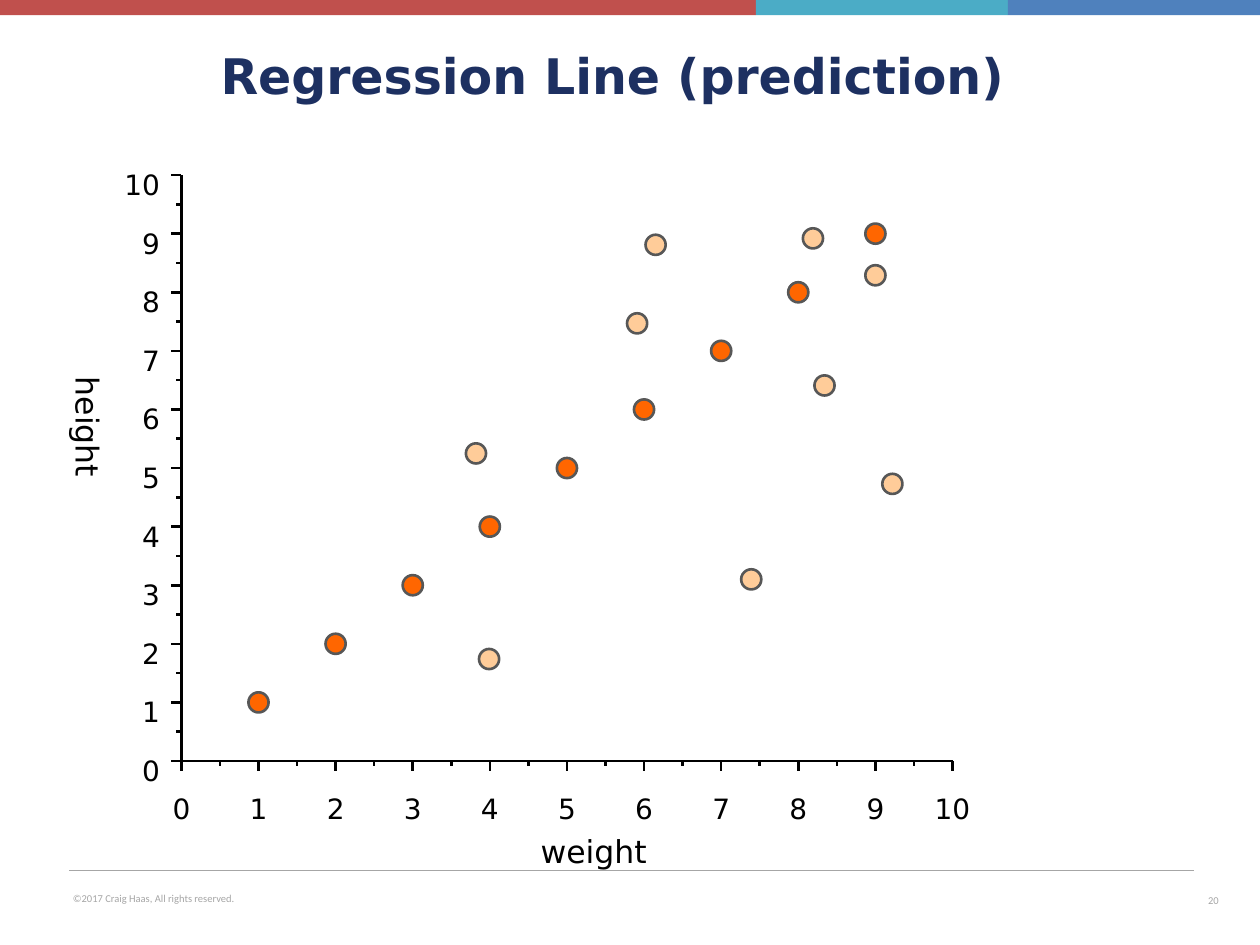
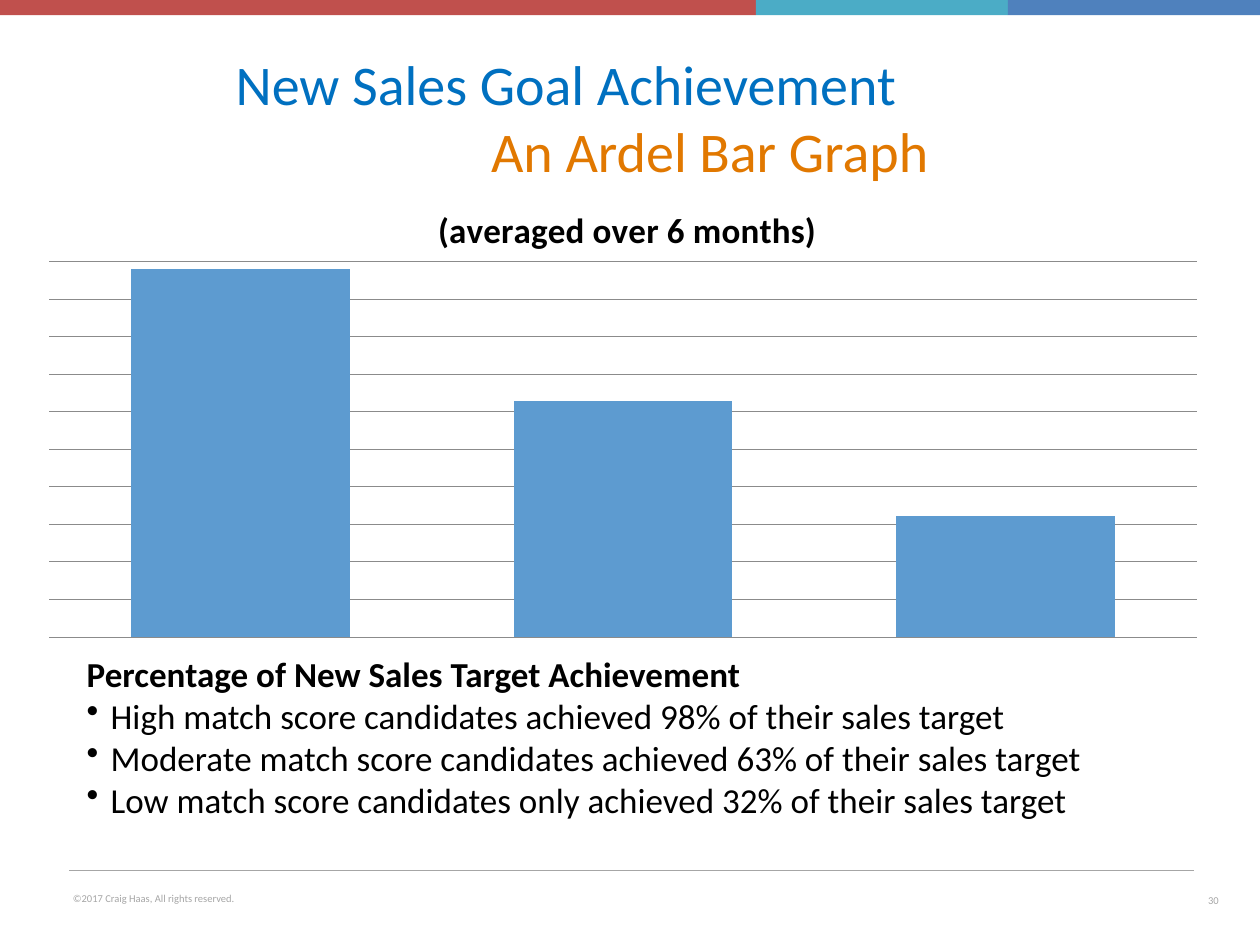
from dataclasses import dataclass

from pptx import Presentation
from pptx import util as u
from pptx.chart.data import CategoryChartData
from pptx.dml.color import RGBColor
from pptx.enum import chart as charts, shapes, text
from pptx.oxml.ns import qn
from pptx.oxml.xmlchemy import OxmlElement

Inches = u.Inches
LEFT, CENTER, RIGHT = text.PP_ALIGN.LEFT, text.PP_ALIGN.CENTER, text.PP_ALIGN.RIGHT
TOP, MIDDLE = text.MSO_ANCHOR.TOP, text.MSO_ANCHOR.MIDDLE


@dataclass(frozen=True)
class Theme:
    # Colours
    red: str = "C0504D"
    teal: str = "4BACC6"
    blue: str = "4F81BD"
    navy: str = "1D3061"
    title_blue: str = "0070C0"
    title_orange: str = "E17800"
    ink: str = "000000"
    footer: str = "A6A6A6"
    point_line: str = "575757"
    on_line: str = "FF6600"
    observed: str = "FFCC99"
    bar: str = "5D9BD0"
    grid: str = "8B8B8B"
    paper: str = "FFFFFF"
    # Fonts
    body_font: str = "Calibri"
    plot_font: str = "DejaVu Sans"
    chart_font: str = "Arial"
    # Type sizes
    footer_size: float = 6
    chart_size: float = 10
    tick_size: float = 16
    axis_size: float = 18
    body_size: float = 20
    plot_title_size: float = 28
    title_size: float = 32


THEME = Theme()


def rgb(value):
    return RGBColor.from_string(value)


def style_font(font, name, size, color, bold=False):
    font.name, font.size, font.bold = name, u.Pt(size), bold
    font.color.rgb = rgb(color)


def add_run(paragraph, words, name, size, color, bold=False):
    run = paragraph.add_run()
    run.text = words
    style_font(run.font, name, size, color, bold)


def set_frame(frame, insets=(0.1, 0.05), anchor=TOP):
    frame.word_wrap = True
    frame.auto_size = text.MSO_AUTO_SIZE.NONE
    frame.vertical_anchor = anchor
    frame.margin_left = frame.margin_right = Inches(insets[0])
    frame.margin_top = frame.margin_bottom = Inches(insets[1])


def add_text_frame(slide, box, insets=(0.1, 0.05), anchor=TOP):
    frame = slide.shapes.add_textbox(*map(Inches, box)).text_frame
    set_frame(frame, insets, anchor)
    return frame


def add_label(slide, box, words, name, size, color=THEME.ink, align=LEFT,
              insets=(0, 0), anchor=TOP):
    frame = add_text_frame(slide, box, insets, anchor)
    paragraph = frame.paragraphs[0]
    paragraph.alignment = align
    add_run(paragraph, words, name, size, color)
    return frame


def add_shape(slide, kind, box, fill, line=None):
    shape = slide.shapes.add_shape(kind, *map(Inches, box))
    shape.shadow.inherit = False
    shape.fill.solid()
    shape.fill.fore_color.rgb = rgb(fill)
    if line:
        shape.line.color.rgb = rgb(line)
        shape.line.width = u.Pt(1.5)
    else:
        shape.line.fill.background()


def add_line(slide, x1, y1, x2, y2, color=THEME.ink, width=1.5):
    line = slide.shapes.add_connector(
        shapes.MSO_CONNECTOR.STRAIGHT, *map(Inches, (x1, y1, x2, y2)))
    line.line.color.rgb = rgb(color)
    line.line.width = u.Pt(width)
    line._element.spPr.append(OxmlElement("a:effectLst"))


def add_bands(slide):
    left = 0
    for width, color in ((6, THEME.red), (2, THEME.teal), (2, THEME.blue)):
        add_shape(slide, shapes.MSO_SHAPE.RECTANGLE, (left, 0, width, 0.12), color)
        left += width


def add_footer(slide, number):
    style = (THEME.body_font, THEME.footer_size, THEME.footer)
    add_label(slide, (0.48, 7.03, 4.25, 0.2), "©2017 Craig Haas, All rights reserved.",
              *style, insets=(0.1, 0.05))
    add_label(slide, (9.41, 7.01, 0.44, 0.27), str(number), *style,
              align=CENTER, insets=(0.08, 0.04), anchor=MIDDLE)
    add_line(slide, 0.55, 6.91, 9.48, 6.91, THEME.footer, 0.25)


def set_title(slide, box, lines):
    """Each line is (words, font, size, color, bold, alignment)."""
    title = slide.shapes.title
    title.left, title.top, title.width, title.height = map(Inches, box)
    frame = title.text_frame
    set_frame(frame, anchor=MIDDLE)
    for index, (*style, align) in enumerate(lines):
        paragraph = frame.add_paragraph() if index else frame.paragraphs[0]
        paragraph.alignment = align
        add_run(paragraph, *style)


def new_slide(presentation, number, title_box, title_lines):
    slide = presentation.slides.add_slide(presentation.slide_layouts[5])
    add_footer(slide, number)
    add_bands(slide)
    set_title(slide, title_box, title_lines)
    return slide


def add_scatter(slide, box, on_line, observed, top_value=10):
    left, top, width, height = box
    bottom = top + height

    def x_at(value):
        return left + width * value / top_value

    def y_at(value):
        return bottom - height * value / top_value

    # Ticks at every half unit, numbers at whole units
    for half in range(2 * top_value + 1):
        value = half / 2
        x, y = x_at(value), y_at(value)
        tick = 0.04 if half % 2 else 0.08
        add_line(slide, left, y, left - tick, y)
        add_line(slide, x, bottom, x, bottom + tick)
        if half % 2 == 0:
            style = (str(half // 2), THEME.plot_font, THEME.tick_size)
            add_label(slide, (left - 0.57, y - 0.06, 0.4, 0.26), *style, align=RIGHT)
            add_label(slide, (x - 0.2, bottom + 0.24, 0.4, 0.26), *style, align=CENTER)

    # Axes and their names
    add_line(slide, left, bottom, left + width, bottom)
    add_line(slide, left, bottom, left, top)
    axis_style = (THEME.plot_font, THEME.axis_size)
    add_label(slide, (left + 2.85, bottom + 0.56, 1.45, 0.27), "weight", *axis_style)
    height_label = add_label(slide, (left - 0.89, top + 1.6, 0.3, 1.2), "height", *axis_style)
    height_label._txBody.bodyPr.set("vert", "vert")

    # Points
    size = 0.16
    for points, color in ((on_line, THEME.on_line), (observed, THEME.observed)):
        for x, y in points:
            point_box = (x_at(x) - size / 2, y_at(y) - size / 2, size, size)
            add_shape(slide, shapes.MSO_SHAPE.OVAL, point_box, color, THEME.point_line)


def set_layout(parent, index, **values):
    """Give a chart part a fixed place, as fractions of the chart."""
    old = parent.find(qn("c:layout"))
    if old is not None:
        parent.remove(old)
    layout, manual = OxmlElement("c:layout"), OxmlElement("c:manualLayout")
    layout.append(manual)
    for tag, value in values.items():
        item = OxmlElement(f"c:{tag}")
        item.set("val", str(value))
        manual.append(item)
    parent.insert(index, layout)


def add_sales_chart(slide, box):
    data = CategoryChartData()
    data.categories = ["1", "2", "3"]
    data.add_series("Series 1", (100, 64, 33))
    chart = slide.shapes.add_chart(
        charts.XL_CHART_TYPE.COLUMN_STACKED, *map(Inches, box), data).chart
    chart.has_legend = False
    style_font(chart.font, THEME.chart_font, THEME.chart_size, THEME.ink)

    # Title over the plot
    chart.has_title = True
    title = chart.chart_title
    add_run(title.text_frame.paragraphs[0], "(averaged over 6 months)",
            THEME.body_font, THEME.body_size, THEME.ink, True)
    set_layout(title._element, 1, xMode="edge", yMode="edge", x=0.34, y=0.14)
    title._element.find(qn("c:overlay")).set("val", "1")

    # Bars
    plot = chart.plots[0]
    plot.gap_width, plot.overlap, plot.vary_by_categories = 75, 100, False
    fill = plot.series[0].format.fill
    fill.solid()
    fill.fore_color.rgb = rgb(THEME.bar)

    # Hidden axes with gridlines
    chart.category_axis.visible = False
    axis = chart.value_axis
    axis.visible = False
    axis.minimum_scale, axis.maximum_scale, axis.major_unit = 0, 102, 10.2
    axis.has_major_gridlines = True
    grid = axis.major_gridlines.format.line
    grid.color.rgb = rgb(THEME.grid)
    grid.width = u.Pt(0.5)
    set_layout(chart._chartSpace.chart.plotArea, 0, layoutTarget="inner", xMode="edge",
               yMode="edge", x=0.02, y=0.26, w=0.96, h=0.72)


def add_findings(slide, box, heading, findings):
    frame = add_text_frame(slide, box)
    style = (THEME.body_font, THEME.body_size, THEME.ink)
    add_run(frame.paragraphs[0], heading, *style, True)
    for finding in findings:
        paragraph = frame.add_paragraph()
        add_run(paragraph, finding, *style)
        properties = paragraph._p.get_or_add_pPr()
        properties.set("marL", str(Inches(0.19)))
        properties.set("indent", str(-Inches(0.19)))
        bullet = OxmlElement("a:buChar")
        bullet.set("char", "•")
        properties.append(bullet)


def build_regression_slide(presentation):
    slide = new_slide(presentation, 20, (1.65, 0.08, 6.85, 1.03), [
        ("Regression Line (prediction)", THEME.plot_font, THEME.plot_title_size,
         THEME.navy, True, LEFT)])
    on_line = [(value, value) for value in range(1, 10)]
    observed = [(9.22, 4.73), (3.99, 1.74), (3.82, 5.25), (5.91, 7.47), (7.39, 3.1),
                (8.34, 6.41), (6.15, 8.81), (8.19, 8.92), (9, 8.29)]
    add_scatter(slide, (1.44, 1.39, 6.12, 4.65), on_line, observed)


def build_sales_slide(presentation):
    font = (THEME.body_font, THEME.title_size)
    slide = new_slide(presentation, 30, (1.77, 0.3, 7.73, 1.25), [
        ("New Sales Goal Achievement", *font, THEME.title_blue, False, LEFT),
        ("An Ardel Bar Graph", *font, THEME.title_orange, False, CENTER)])
    add_findings(slide, (0.59, 5.13, 9, 1.7), "Percentage of New Sales Target Achievement", [
        "High match score candidates achieved 98% of their sales target",
        "Moderate match score candidates achieved 63% of their sales target",
        "Low match score candidates only achieved 32% of their sales target"])
    add_sales_chart(slide, (0.2, 1, 9.49, 4.14))


def main():
    presentation = Presentation()
    presentation.slide_width, presentation.slide_height = Inches(10), Inches(7.5)
    background = presentation.slide_master.background.fill
    background.solid()
    background.fore_color.rgb = rgb(THEME.paper)
    build_regression_slide(presentation)
    build_sales_slide(presentation)
    presentation.save("out.pptx")


if __name__ == "__main__":
    main()
